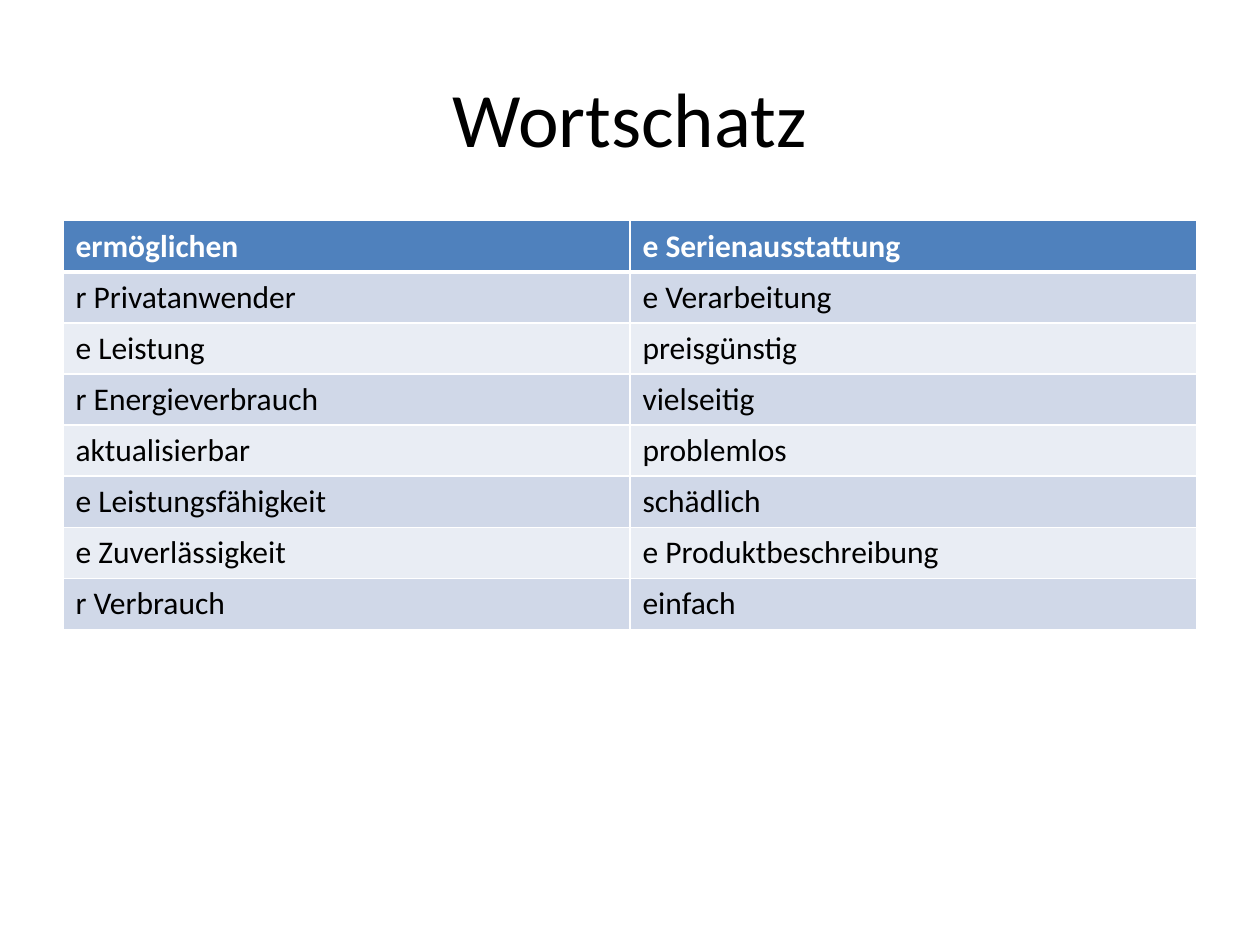
from dataclasses import dataclass

from lxml import etree
from pptx import Presentation
from pptx import util as u
from pptx.dml.color import RGBColor
from pptx.enum import text
from pptx.oxml.ns import qn

COLORS = {
    "text": "000000",
    "header": "4F81BD",
    "header_text": "FFFFFF",
    "border": "FFFFFF",
    "odd_row": "D0D8E8",
    "even_row": "E9EDF4",
}

VOCABULARY = [
    ("ermöglichen", "e Serienausstattung"),
    ("r Privatanwender", "e Verarbeitung"),
    ("e Leistung", "preisgünstig"),
    ("r Energieverbrauch", "vielseitig"),
    ("aktualisierbar", "problemlos"),
    ("e Leistungsfähigkeit", "schädlich"),
    ("e Zuverlässigkeit", "e Produktbeschreibung"),
    ("r Verbrauch", "einfach"),
]


@dataclass
class SlideBuilder:
    slide: object
    font: str = "Calibri"
    left: float = 1.27
    width: float = 22.86

    def format_runs(self, paragraph, size, color, bold=False):
        for run in paragraph.runs:
            run.font.name = self.font
            run.font.size = u.Pt(size)
            run.font.bold = bold
            run.font.color.rgb = RGBColor.from_string(COLORS[color])

    def title(self, wording, top, height):
        shape = self.slide.shapes.title
        shape.left, shape.top = u.Cm(self.left), u.Cm(top)
        shape.width, shape.height = u.Cm(self.width), u.Cm(height)
        frame = shape.text_frame
        frame.text = wording
        frame.vertical_anchor = text.MSO_ANCHOR.MIDDLE
        paragraph = frame.paragraphs[0]
        paragraph.alignment = text.PP_ALIGN.CENTER
        self.format_runs(paragraph, 44, "text")

    def borders(self, cell, top, bottom):
        properties = cell._tc.get_or_add_tcPr()
        for side, points in (("L", 1), ("R", 1), ("T", top), ("B", bottom)):
            line = etree.SubElement(properties, qn(f"a:ln{side}"), w=str(u.Pt(points)))
            fill = etree.SubElement(line, qn("a:solidFill"))
            etree.SubElement(fill, qn("a:srgbClr"), val=COLORS["border"])

    def cell(self, cell, wording, row):
        header = row == 0
        self.borders(cell, top=3 if row == 1 else 1, bottom=3 if header else 1)
        fill = "header" if header else "odd_row" if row % 2 else "even_row"
        cell.fill.solid()
        cell.fill.fore_color.rgb = RGBColor.from_string(COLORS[fill])
        cell.text_frame.text = wording
        color = "header_text" if header else "text"
        self.format_runs(cell.text_frame.paragraphs[0], 18, color, bold=header)

    def table(self, rows, top, row_height):
        shape = self.slide.shapes.add_table(
            len(rows), len(rows[0]), u.Cm(self.left), u.Cm(top),
            u.Cm(self.width), u.Cm(row_height * len(rows)),
        )
        for row, words in enumerate(rows):
            for column, wording in enumerate(words):
                self.cell(shape.table.cell(row, column), wording, row)


def main():
    presentation = Presentation()
    presentation.slide_width = u.Cm(25.4)
    presentation.slide_height = u.Cm(19.05)
    title_only = presentation.slide_layouts[5]
    builder = SlideBuilder(presentation.slides.add_slide(title_only))
    builder.title("Wortschatz", top=0.76, height=3.18)
    builder.table(VOCABULARY, top=4.45, row_height=1.03)
    presentation.save("out.pptx")


if __name__ == "__main__":
    main()
